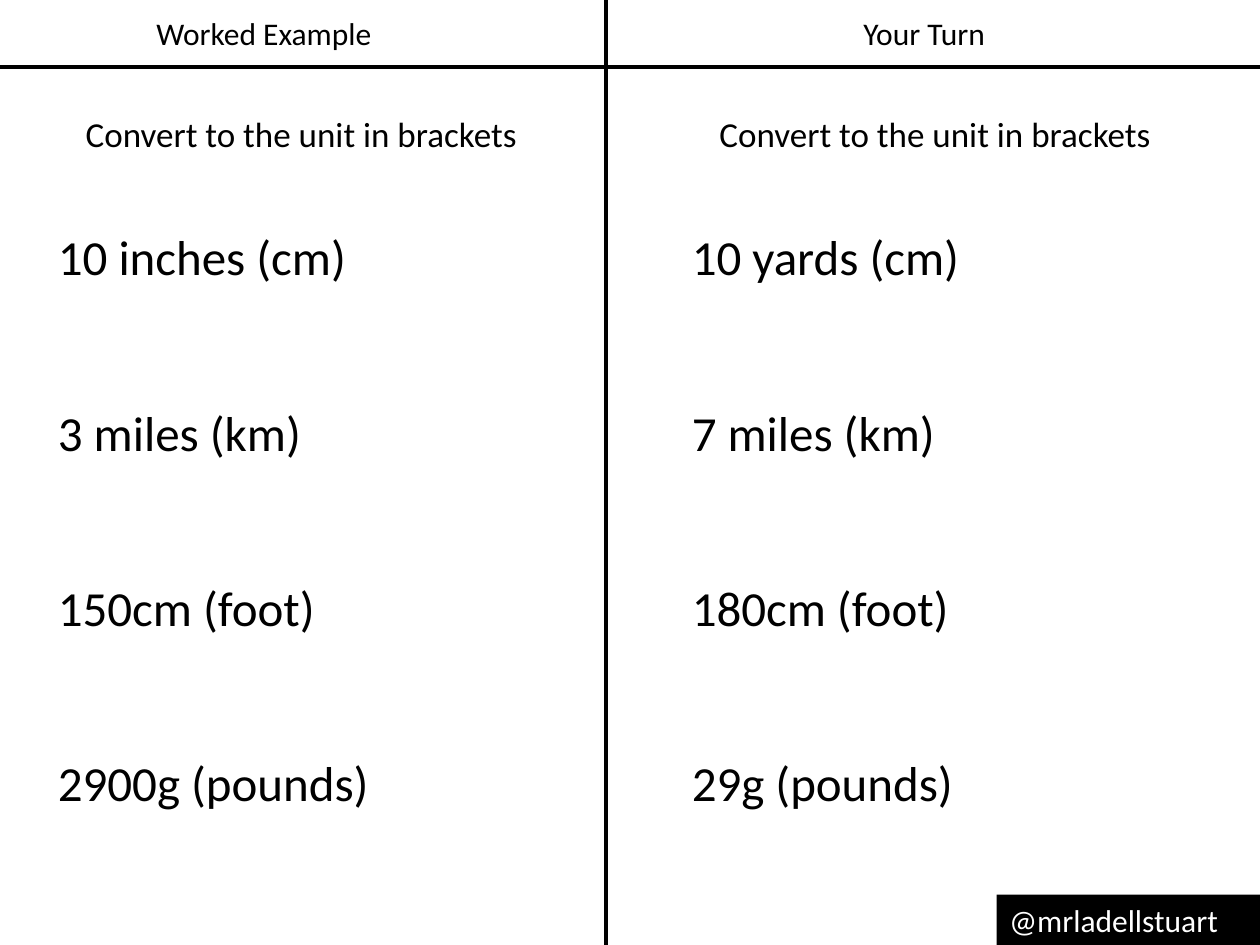
from pptx import Presentation
from pptx.dml.color import RGBColor as RGB
from pptx.enum.shapes import MSO_CONNECTOR as LINE, MSO_SHAPE as SHAPE
from pptx.enum.text import MSO_AUTO_SIZE as FIT, PP_ALIGN as ALIGN
from pptx.util import Inches, Pt
from lxml import etree

INK = {"black": "000000", "white": "FFFFFF"}
FONT = "Calibri"
NS = "http://schemas.openxmlformats.org/drawingml/2006/main"

deck = Presentation()
deck.slide_width, deck.slide_height = Inches(10), Inches(7.5)
slide = deck.slides.add_slide(deck.slide_layouts[6])
shapes = slide.shapes


def write(shape, text, size, ink="black", align=ALIGN.LEFT, gap=0):
    frame = shape.text_frame
    frame.text = text
    for i, para in enumerate(frame.paragraphs):
        para.alignment = align
        para.space_before = Pt(gap if i else 0)
        for run in para.runs:
            run.font.name = FONT
            run.font.size = Pt(size)
            run.font.color.rgb = RGB.from_string(INK[ink])


def add_text(x, y, w, h, text, size, inset=True, **style):
    box = shapes.add_textbox(Inches(x), Inches(y), Inches(w), Inches(h))
    frame = box.text_frame
    frame.word_wrap = inset
    frame.auto_size = FIT.SHAPE_TO_FIT_TEXT
    if not inset:
        frame.margin_left = frame.margin_right = 0
        frame.margin_top = frame.margin_bottom = 0
    write(box, text, size, **style)


for x1, y1, x2, y2 in [(4.81, 0, 4.81, 7.5), (0, 0.53, 10, 0.53)]:
    rule = shapes.add_connector(
        LINE.STRAIGHT, Inches(x1), Inches(y1), Inches(x2), Inches(y2))
    rule.line.color.rgb = RGB.from_string(INK["black"])
    rule.line.width = Pt(2.5)
    etree.SubElement(rule._element.spPr, f"{{{NS}}}effectLst")

columns = [
    ("Worked Example", 1.13, 0.46, 2.5,
     ["10 inches (cm)", "3 miles (km)", "150cm (foot)", "2900g (pounds)"]),
    ("Your Turn", 6.37, 5.49, 2.15,
     ["10 yards (cm)", "7 miles (km)", "180cm (foot)", "29g (pounds)"]),
]
for head, head_x, left, width, tasks in columns:
    add_text(head_x, 0.06, 1.93, 0.4, head, 18, align=ALIGN.CENTER)
    add_text(left + 0.22, 0.89, 3.46, 0.34,
             "Convert to the unit in brackets", 20, inset=False)
    add_text(left, 1.8, width, 4.71, "\n".join(tasks), 28,
             inset=False, gap=66.6)

tag = shapes.add_shape(
    SHAPE.RECTANGLE, Inches(7.91), Inches(7.1), Inches(2.09), Inches(0.4))
tag.shadow.inherit = False
tag.fill.solid()
tag.fill.fore_color.rgb = RGB.from_string(INK["black"])
tag.line.fill.background()
write(tag, "@mrladellstuart", 18, ink="white")

deck.save("out.pptx")
